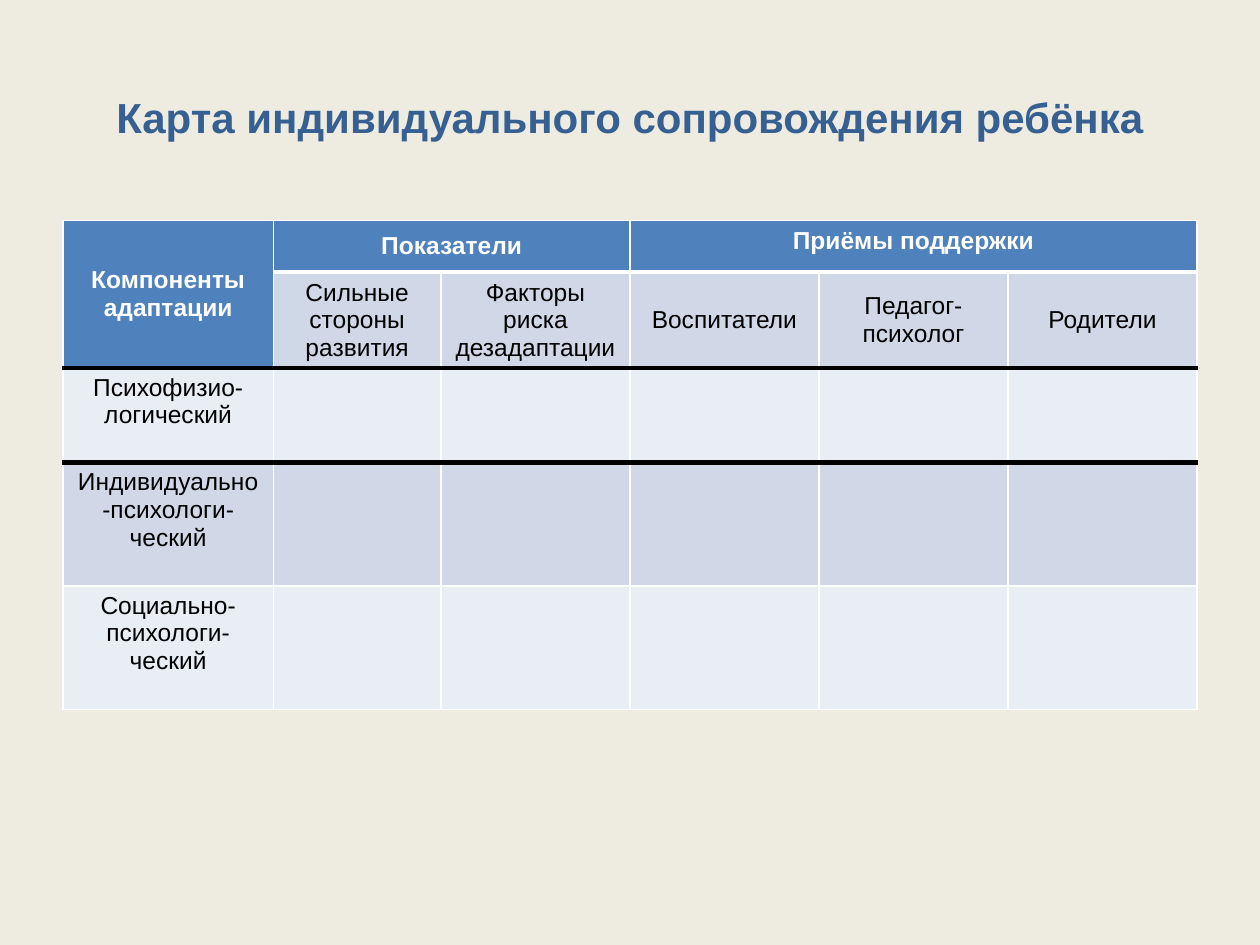
import pptx
import pptx.dml.color
import pptx.enum.text
import pptx.oxml
import pptx.oxml.ns
import pptx.util

Inches = pptx.util.Inches
Pt = pptx.util.Pt
ALIGN = pptx.enum.text.PP_ALIGN
ANCHOR = pptx.enum.text.MSO_ANCHOR

HEADING = "Карта индивидуального сопровождения ребёнка"
ROWS = [
    ["Компоненты адаптации", "Показатели", "", "Приёмы поддержки", "", ""],
    ["", "Сильные стороны развития", "Факторы риска дезадаптации",
     "Воспитатели", "Педагог-психолог", "Родители"],
    ["Психофизио-логический"] + [""] * 5,
    ["Индивидуально-психологи-\nческий"] + [""] * 5,
    ["Социально-психологи-ческий"] + [""] * 5,
]
MERGES = [((0, 0), (1, 0)), ((0, 1), (0, 2)), ((0, 3), (0, 5))]
COLUMN_WIDTHS = [1.67, 1.33, 1.5, 1.5, 1.5, 1.5]
ROW_HEIGHTS = [0.41, 0.76, 0.75, 0.98, 0.98]
ROW_FILLS = ["4F81BD", "D0D8E8", "E9EDF4", "D0D8E8", "E9EDF4"]
THIN = ("FFFFFF", 1)
HEADER_RULE = ("FFFFFF", 3)
SECTION_RULE = ("000000", 3)
ROW_RULES = [THIN, HEADER_RULE, SECTION_RULE, SECTION_RULE, THIN, THIN]
TOP_ANCHORED = "Приёмы поддержки"


def color(value):
    return pptx.dml.color.RGBColor.from_string(value)


def write(paragraph, text, size, ink, bold):
    paragraph.alignment = ALIGN.CENTER
    run = paragraph.add_run()
    run.text = text
    run.font.name = "Arial"
    run.font.size = Pt(size)
    run.font.bold = bold
    run.font.color.rgb = color(ink)


def draw_borders(cell, top, bottom):
    properties = cell._tc.get_or_add_tcPr()
    for side, (ink, width) in zip("LRTB", (THIN, THIN, top, bottom)):
        properties.append(pptx.oxml.parse_xml(
            f'<a:ln{side} {pptx.oxml.ns.nsdecls("a")} w="{Pt(width)}">'
            f'<a:solidFill><a:srgbClr val="{ink}"/></a:solidFill></a:ln{side}>'))


def fill_cell(cell, row, text):
    if not cell.is_spanned:
        height = cell.span_height if cell.is_merge_origin else 1
        draw_borders(cell, ROW_RULES[row], ROW_RULES[row + height])
    cell.fill.solid()
    cell.fill.fore_color.rgb = color(ROW_FILLS[row])
    if not text:
        return
    if row < 2 and text != TOP_ANCHORED:
        cell.vertical_anchor = ANCHOR.MIDDLE
    for index, line in enumerate(text.split("\n")):
        frame = cell.text_frame
        paragraph = frame.add_paragraph() if index else frame.paragraphs[0]
        write(paragraph, line, 14, "000000" if row else "FFFFFF", row == 0)


def main():
    deck = pptx.Presentation()
    deck.slide_width, deck.slide_height = Inches(10), Inches(7.5)
    slide = deck.slides.add_slide(deck.slide_layouts[5])
    slide.background.fill.solid()
    slide.background.fill.fore_color.rgb = color("EEECE1")

    heading = slide.shapes.title
    heading.left, heading.top = Inches(0.5), Inches(0.3)
    heading.width, heading.height = Inches(9), Inches(1.25)
    heading.text_frame.vertical_anchor = ANCHOR.MIDDLE
    write(heading.text_frame.paragraphs[0], HEADING, 24, "376092", True)

    support_map = slide.shapes.add_table(
        len(ROWS), len(COLUMN_WIDTHS), Inches(0.5), Inches(1.75),
        Inches(sum(COLUMN_WIDTHS)), Inches(sum(ROW_HEIGHTS))).table
    for column, width in zip(support_map.columns, COLUMN_WIDTHS):
        column.width = Inches(width)
    for row, height in zip(support_map.rows, ROW_HEIGHTS):
        row.height = Inches(height)
    for first, last in MERGES:
        support_map.cell(*first).merge(support_map.cell(*last))
    for row, texts in enumerate(ROWS):
        for column, text in enumerate(texts):
            fill_cell(support_map.cell(row, column), row, text)

    deck.save("out.pptx")


if __name__ == "__main__":
    main()
